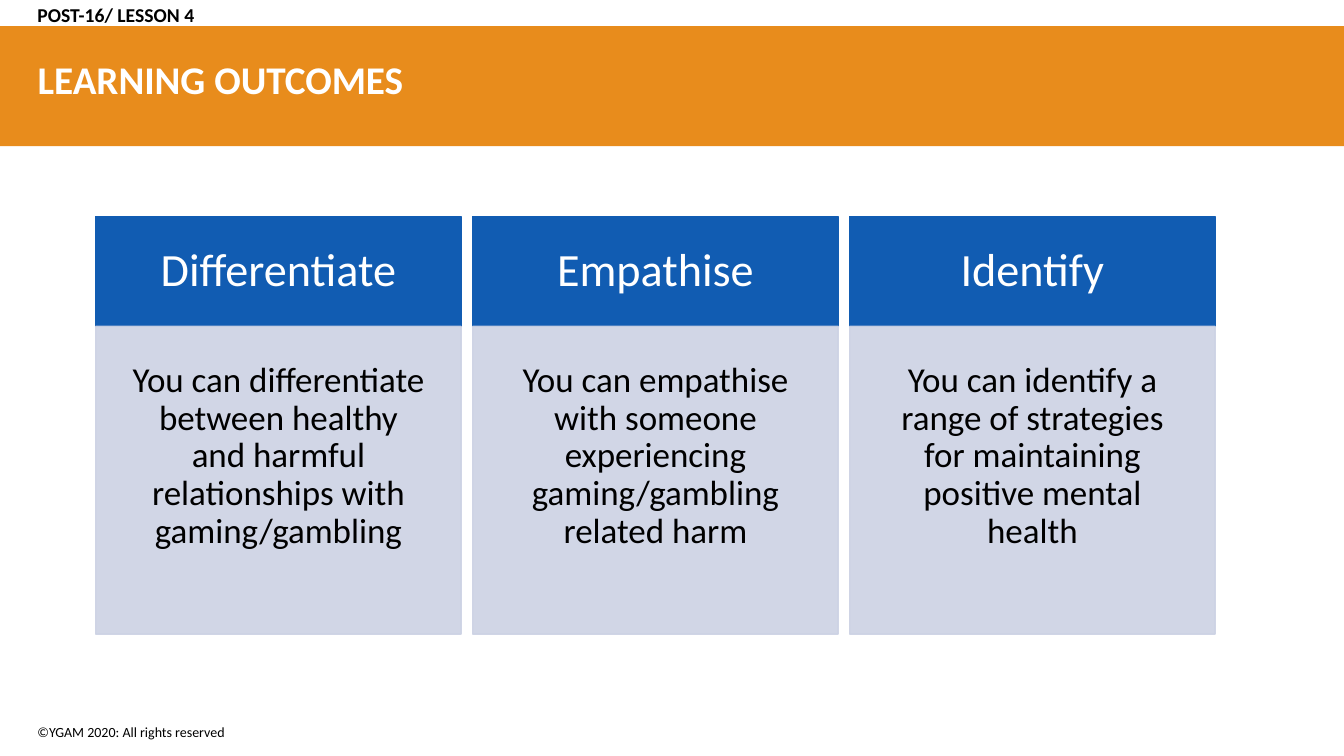
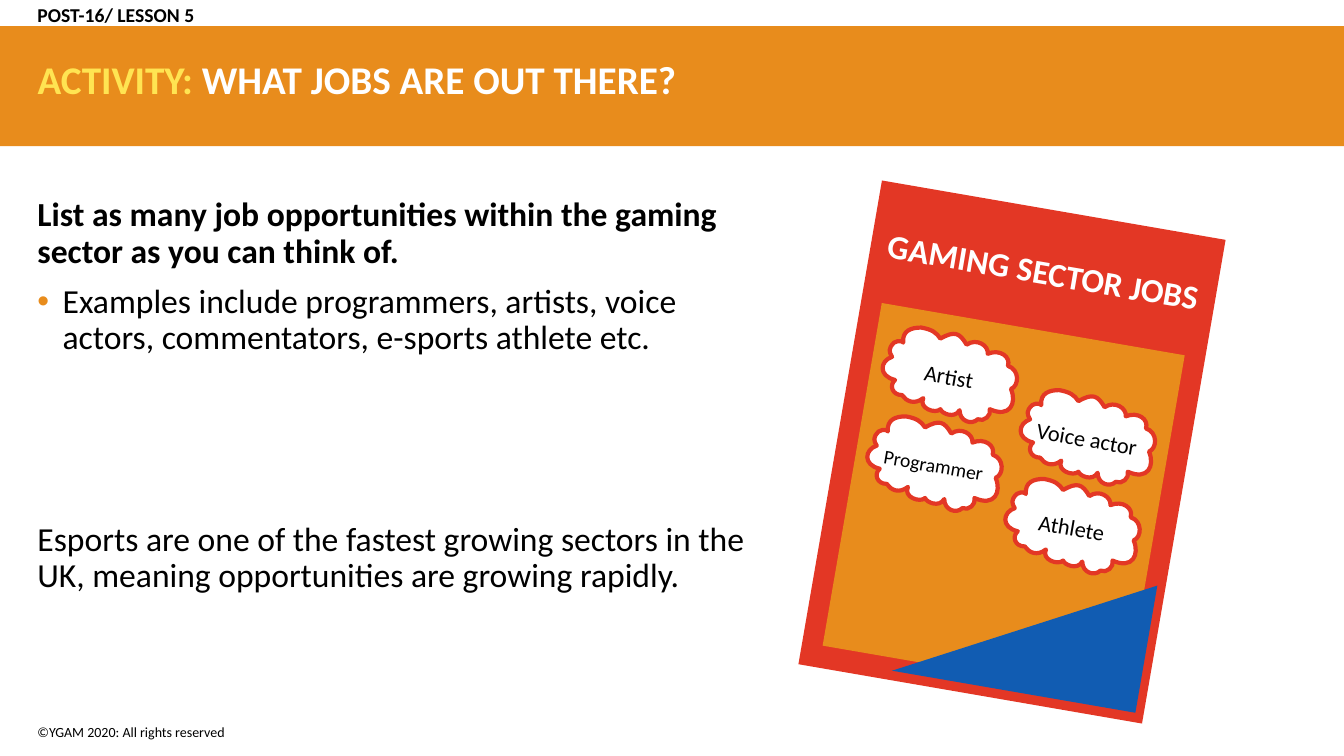
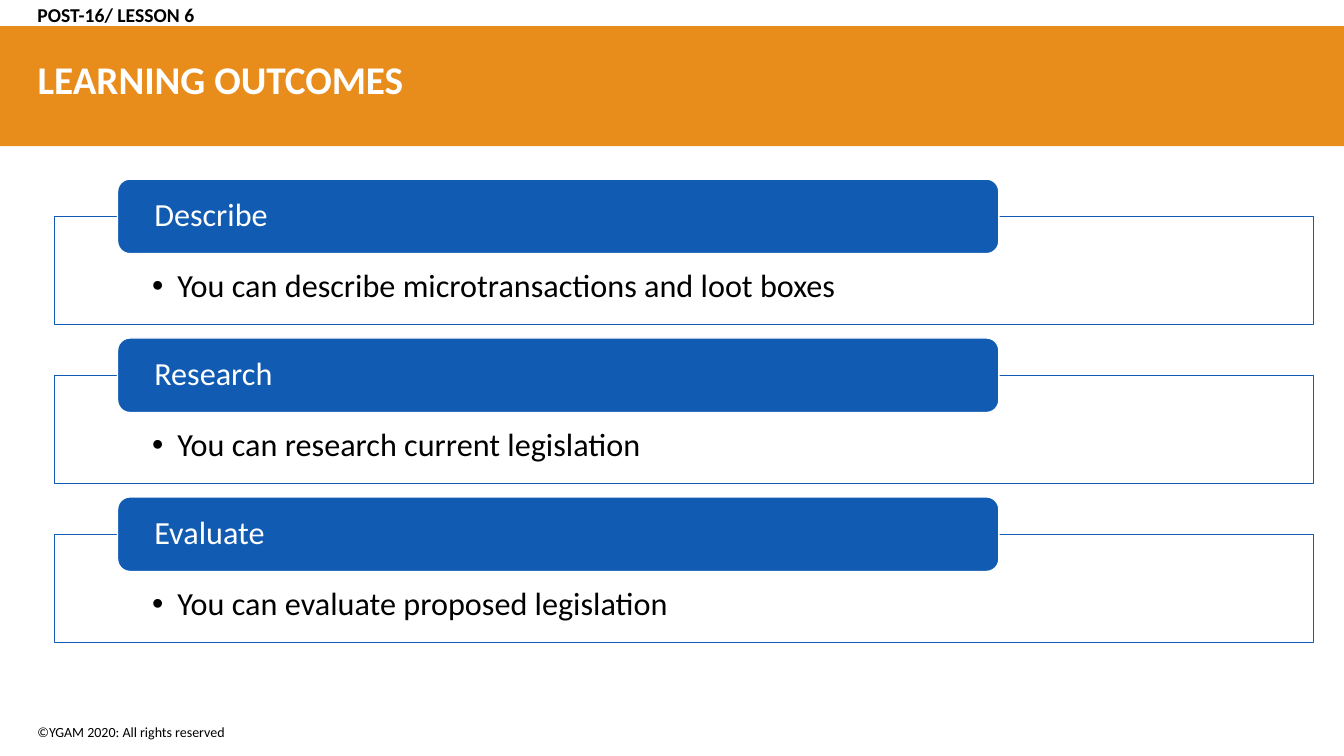
"""Build three lesson slides about gaming on a grid of 160 columns by 90 rows."""
import math
from dataclasses import dataclass
from typing import NamedTuple

import pptx
import pptx.dml.color
import pptx.enum.shapes
import pptx.enum.text
import pptx.oxml.ns
import pptx.shapes.autoshape
import pptx.slide
import pptx.text.text
import pptx.util
from lxml import etree

COLUMNS, ROWS = 160, 90
CELL = pptx.util.Inches(7.5) // ROWS

RGBColor = pptx.dml.color.RGBColor
ORANGE = RGBColor(0xE8, 0x8C, 0x1C)
BLUE = RGBColor(0x11, 0x5C, 0xB2)
PALE = RGBColor(0xCC, 0xD2, 0xE4)
RED = RGBColor(0xE3, 0x37, 0x25)
YELLOW = RGBColor(0xFF, 0xE4, 0x52)
WHITE = RGBColor(0xFF, 0xFF, 0xFF)
BLACK = RGBColor(0x00, 0x00, 0x00)
FONT = "Calibri"

Shape = pptx.shapes.autoshape.Shape
Page = pptx.slide.Slide
Align = pptx.enum.text.PP_ALIGN
Anchor = pptx.enum.text.MSO_ANCHOR
Preset = pptx.enum.shapes.MSO_SHAPE
Point = tuple[float, float]
qn = pptx.oxml.ns.qn

MARGIN = 3.28
TILT = 9.8
POSTER_CENTRE = (120.48, 53.82)
CLOUD_WIDTH, CLOUD_HEIGHT = 15.96, 10.08
CLOUD_UNIT = 0.12
CLOUD_ORIGIN = (13, -2)
CLOUD_START = (26, 20)
CLOUD_CURVES = (
    ((25, 8), (34, 5), (44, 5)),
    ((55, 7), (59, 10), (63, 16)),
    ((77, 8), (82, 10), (89, 22)),
    ((99, 15), (111, 23), (110, 31)),
    ((122, 26), (133, 34), (130, 43)),
    ((142, 47), (141, 63), (133, 66)),
    ((139, 80), (132, 95), (112, 86)),
    ((114, 92), (106, 99), (100, 96)),
    ((94, 102), (82, 98), (82, 87)),
    ((77, 96), (64, 90), (63, 86)),
    ((58, 91), (41, 85), (46, 75)),
    ((37, 82), (29, 78), (25, 72)),
    ((15, 72), (12, 62), (18, 57)),
    ((1, 53), (3, 38), (15, 34)),
    ((12, 29), (11, 26), (17, 20)),
    ((22, 17), (26, 19), (26, 20)),
)


class Frame(NamedTuple):
    left: float
    top: float
    width: float
    height: float


class Inset(NamedTuple):
    left: float = 1.2
    top: float = 0.6
    right: float = 1.2
    bottom: float = 0.6


@dataclass(frozen=True)
class Outcome:
    verb: str
    sentence: str


@dataclass(frozen=True)
class Job:
    name: str
    column: int
    row: int
    size: int = 16


CARDS = (
    Outcome("Differentiate", "You can differentiate between healthy and harmful "
            "relationships with gaming/gambling"),
    Outcome("Empathise", "You can empathise with someone experiencing "
            "gaming/gambling related harm"),
    Outcome("Identify", "You can identify a range of strategies for maintaining "
            "positive mental health"),
)
SECTIONS = (
    Outcome("Describe", "You can describe microtransactions and loot boxes"),
    Outcome("Research", "You can research current legislation"),
    Outcome("Evaluate", "You can evaluate proposed legislation"),
)
JOBS = (
    Job("Artist", 0, 0),
    Job("Voice actor", 1, 0),
    Job("Programmer", 0, 1, 14),
    Job("Athlete", 1, 1),
)


def emu(cells: float) -> pptx.util.Emu:
    return pptx.util.Emu(round(cells * CELL))


def place(shape: Shape, frame: Frame) -> None:
    shape.left, shape.top, shape.width, shape.height = map(emu, frame)


def add_bullet(para: pptx.text.text._Paragraph, color: RGBColor) -> None:
    properties = para._p.get_or_add_pPr()
    properties.set("marL", str(pptx.util.Inches(0.25)))
    properties.set("indent", str(-pptx.util.Inches(0.25)))
    tint = etree.SubElement(properties, qn("a:buClr"))
    etree.SubElement(tint, qn("a:srgbClr"), val=str(color))
    etree.SubElement(properties, qn("a:buFont"), typeface="Arial")
    etree.SubElement(properties, qn("a:buChar"), char="•")


def write(shape: Shape, text: str, *, size: float, color: RGBColor = BLACK,
          bold: bool = False, align: Align = Align.LEFT, anchor: Anchor = Anchor.TOP,
          inset: Inset = Inset(), spacing: float = 0.9, before: float = 0,
          bullet: RGBColor | None = None, lead: str = "") -> None:
    frame = shape.text_frame
    frame.word_wrap = True
    frame.auto_size = pptx.enum.text.MSO_AUTO_SIZE.NONE
    frame.vertical_anchor = anchor
    frame.margin_left, frame.margin_top, frame.margin_right, frame.margin_bottom = map(emu, inset)
    para = frame.add_paragraph() if frame.text else frame.paragraphs[0]
    if bullet is not None:
        add_bullet(para, bullet)
    para.alignment = align
    para.line_spacing = spacing
    para.space_before = pptx.util.Pt(before)
    for words, tint in ((lead, YELLOW), (text, color)):
        if words:
            span = para.add_run()
            span.text = words
            span.font.name = FONT
            span.font.size = pptx.util.Pt(size)
            span.font.bold = bold
            span.font.color.rgb = tint


def paint(shape: Shape, fill: RGBColor, line: RGBColor | None = None,
          weight: float = 1, opacity: int = 100) -> None:
    shape.shadow.inherit = False
    shape.fill.solid()
    shape.fill.fore_color.rgb = fill
    if line is None:
        shape.line.fill.background()
    else:
        shape.line.color.rgb = line
        shape.line.width = pptx.util.Pt(weight)
    if opacity < 100:
        for color in shape.element.spPr.iter(qn("a:srgbClr")):
            etree.SubElement(color, qn("a:alpha"), val=str(opacity * 1000))


def add_block(page: Page, frame: Frame, fill: RGBColor, line: RGBColor | None = None,
              preset: Preset = Preset.RECTANGLE, opacity: int = 100) -> Shape:
    block = page.shapes.add_shape(preset, *map(emu, frame))
    paint(block, fill, line, opacity=opacity)
    return block


def add_label(page: Page, frame: Frame) -> Shape:
    return page.shapes.add_textbox(*map(emu, frame))


def add_outline(page: Page, points: list[Point], frame: Frame) -> Shape:
    start, *rest = [(emu(x), emu(y)) for x, y in points]
    builder = page.shapes.build_freeform(*start)
    builder.add_line_segments(rest, close=True)
    outline = builder.convert_to_shape()
    place(outline, frame)
    return outline


def turn(x: float, y: float, degrees: float) -> Point:
    cosine, sine = math.cos(math.radians(degrees)), math.sin(math.radians(degrees))
    return x * cosine - y * sine, x * sine + y * cosine


def on_poster(x: float, y: float, width: float, height: float) -> Frame:
    across, down = turn(x, y, TILT)
    return Frame(POSTER_CENTRE[0] + across - width / 2,
                 POSTER_CENTRE[1] + down - height / 2, width, height)


def add_cloud(page: Page, x: float, y: float) -> Shape:
    corners = [(0, 0), (CLOUD_WIDTH, 0), (CLOUD_WIDTH, CLOUD_HEIGHT), (0, CLOUD_HEIGHT)]
    cloud = add_outline(page, corners, on_poster(x, y, CLOUD_WIDTH, CLOUD_HEIGHT))
    route = next(cloud.element.spPr.iter(qn("a:path")))
    for segment in list(route):
        route.remove(segment)
    steps = [("a:moveTo", (CLOUD_START,))] + [("a:cubicBezTo", curve) for curve in CLOUD_CURVES]
    for tag, points in steps:
        segment = etree.SubElement(route, qn(tag))
        for point in points:
            across, down = turn(*point, -TILT)
            etree.SubElement(segment, qn("a:pt"),
                             x=str(emu((across - CLOUD_ORIGIN[0]) * CLOUD_UNIT)),
                             y=str(emu((down - CLOUD_ORIGIN[1]) * CLOUD_UNIT)))
    etree.SubElement(route, qn("a:close"))
    paint(cloud, WHITE, RED, weight=3)
    return cloud


def dress_layout(layout: pptx.slide.SlideLayout, page: Page) -> None:
    band = add_block(page, Frame(0, 3.12, COLUMNS, 14.28), ORANGE)
    notice = add_label(page, Frame(MARGIN, 85.56, 67.68, 3.24))
    write(notice, "©YGAM 2020: All rights reserved", size=10, spacing=1)
    for order, shape in enumerate((band, notice)):
        shape.element.nvSpPr.cNvPr.id = 100 + order
        layout.shapes.element.insert(2 + order, shape.element)


def add_page(deck, lesson: int, title: str, lead: str = "") -> Page:
    page = deck.slides.add_slide(deck.slide_layouts[5])
    heading = page.shapes.title
    place(heading, Frame(MARGIN, 2.64, 153.12, 14.28))
    write(heading, title, lead=lead, size=28, color=WHITE, bold=True, anchor=Anchor.MIDDLE)
    label = add_label(page, Frame(MARGIN, -0.72, 70.32, 5.28))
    write(label, f"POST-16/ LESSON {lesson}", size=14, bold=True, anchor=Anchor.MIDDLE)
    return page


def draw_cards(page: Page) -> None:
    for index, card in enumerate(CARDS):
        left = 11.4 + index * 44.88
        head = add_block(page, Frame(left, 25.8, 43.5, 13.08), BLUE, BLUE)
        write(head, card.verb, size=33, color=WHITE, align=Align.CENTER,
              anchor=Anchor.MIDDLE, inset=Inset(3.48, 3.48, 3.48, 3.48))
        body = add_block(page, Frame(left, 38.85, 43.5, 36.65), PALE, PALE, opacity=90)
        write(body, card.sentence, size=25, align=Align.CENTER,
              inset=Inset(4.32, 4.27, 4.32, 4.32))


def draw_task(page: Page) -> None:
    task = add_label(page, Frame(MARGIN, 22.98, 86.88, 49))
    write(task, "List as many job opportunities within the gaming sector as you can think of.",
          size=24, bold=True)
    write(task, "Examples include programmers, artists, voice actors, commentators, "
          "e-sports athlete etc.", size=24, before=10, bullet=ORANGE)
    write(task, "Esports are one of the fastest growing sectors in the UK, meaning "
          "opportunities are growing rapidly.", size=24, before=118)


def draw_poster(page: Page) -> None:
    sheet = add_block(page, on_poster(0, 0, 41.52, 58.44), RED)
    panel = add_block(page, on_poster(0, 5.85, 36.6, 41.4), ORANGE)
    heading = add_label(page, on_poster(0, -21.85, 41.52, 6))
    write(heading, "GAMING SECTOR JOBS", size=24, color=WHITE, bold=True,
          align=Align.CENTER, spacing=1)
    parts = [sheet, panel, heading]
    for job in JOBS:
        cloud = add_cloud(page, -8.93 + job.column * 17.46,
                          -7.66 + job.column * 4.54 + job.row * 10.73)
        write(cloud, job.name, size=job.size, align=Align.CENTER,
              anchor=Anchor.MIDDLE, spacing=1)
        parts.append(cloud)
    corner = add_outline(page, [(29.4, 15.36), (29.4, 0), (0, 15.36)],
                         on_poster(5.05, 20.4, 29.4, 15.36))
    paint(corner, BLUE)
    for part in (*parts, corner):
        part.rotation = TILT


def draw_sections(page: Page) -> None:
    for index, section in enumerate(SECTIONS):
        drop = index * 18.92
        body = add_block(page, Frame(6.48, 25.8 + drop, 149.88, 12.84), WHITE, BLUE)
        write(body, section.sentence, size=23, bullet=BLACK,
              inset=Inset(11.64, 6.32, 11.64, 2.16))
        tab = add_block(page, Frame(14, 21.32 + drop, 104.92, 8.88), BLUE, WHITE,
                        Preset.ROUNDED_RECTANGLE)
        write(tab, section.verb, size=23, color=WHITE, anchor=Anchor.MIDDLE,
              inset=Inset(3.94, 0, 3.94, 0))


def main() -> None:
    deck = pptx.Presentation()
    deck.slide_width, deck.slide_height = emu(COLUMNS), emu(ROWS)
    cards = add_page(deck, 4, "LEARNING OUTCOMES")
    dress_layout(deck.slide_layouts[5], cards)
    draw_cards(cards)
    activity = add_page(deck, 5, "WHAT JOBS ARE OUT THERE?", lead="ACTIVITY: ")
    draw_task(activity)
    draw_poster(activity)
    draw_sections(add_page(deck, 6, "LEARNING OUTCOMES"))
    deck.save("out.pptx")


if __name__ == "__main__":
    main()
